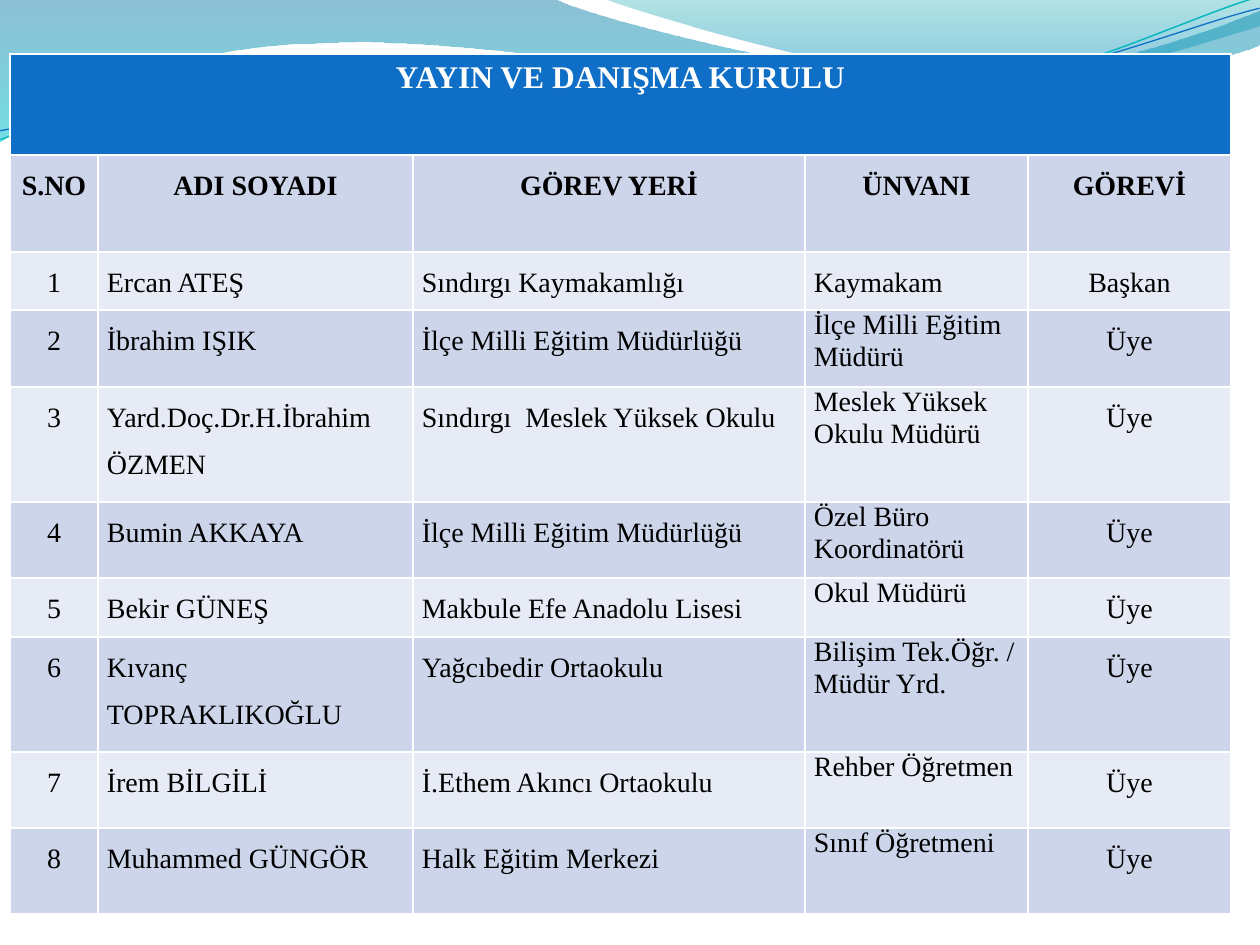
from lxml import etree
from pptx import Presentation
from pptx.dml.color import RGBColor
from pptx.enum.text import PP_ALIGN
from pptx.oxml.ns import qn
from pptx.util import Emu, Pt

LEFT, MID = PP_ALIGN.LEFT, PP_ALIGN.CENTER
SCALE = 914400 / 126
FONT = "Times New Roman"
WHITE, BLACK, BLUE, TEAL = "FFFFFF", "000000", "0F6FC6", "0AB8BF"
BANDS = ["E7EBF5", "CCD5EA"]
TILT = 357.3

COLS = [88, 315, 392, 223, 203]
ROWS = [101, 97, 58, 77, 115, 76, 59, 115, 76, 86]
TITLE = "YAYIN VE DANIŞMA KURULU"
HEADS = ["S.NO", "ADI SOYADI", "GÖREV YERİ", "ÜNVANI", "GÖREVİ"]
BOARD = [
    ("Ercan ATEŞ", "Sındırgı Kaymakamlığı", "Kaymakam", "Başkan"),
    ("İbrahim IŞIK", "İlçe Milli Eğitim Müdürlüğü", "İlçe Milli Eğitim Müdürü", "Üye"),
    ("Yard.Doç.Dr.H.İbrahim ÖZMEN", "Sındırgı  Meslek Yüksek Okulu",
     "Meslek Yüksek Okulu Müdürü", "Üye"),
    ("Bumin AKKAYA", "İlçe Milli Eğitim Müdürlüğü", "Özel Büro Koordinatörü", "Üye"),
    ("Bekir GÜNEŞ", "Makbule Efe Anadolu Lisesi", "Okul Müdürü", "Üye"),
    ("Kıvanç TOPRAKLIKOĞLU", "Yağcıbedir Ortaokulu", "Bilişim Tek.Öğr. / Müdür Yrd.", "Üye"),
    ("İrem BİLGİLİ", "İ.Ethem Akıncı Ortaokulu", "Rehber Öğretmen", "Üye"),
    ("Muhammed GÜNGÖR", "Halk Eğitim Merkezi", "Sınıf Öğretmeni", "Üye"),
]

WAVES = [
    ([(0, 0), (554, -1),
      (600, 21, 837, 79, 955, 79), (1075, 79, 1207, 33, 1260, 11), (1261, 45),
      (1239, 55, 1096, 96, 940, 95), (784, 95, 481, 35, 324, 43),
      (163, 45, 58, 105, -1, 142)],
     [(0, "0074A1", 45), (1, "00C6CF", 55)]),
    ([(604, -1), (641, 14, 859, 78, 969, 82),
      (1079, 87, 1211, 40, 1260, 26), (1260, 0)],
     [(0, "00A1A9", 30), (0.8, "008BBF", 45)]),
]
CURVES = [
    ([(-2, 110), (59, 90, 200, 52, 350, 53), (499, 53, 745, 118, 896, 114),
      (1049, 109, 1184, 45, 1260, 27)], TEAL, 0.85),
    ([(-2, 101), (57, 94, 207, 57, 357, 58), (509, 58, 750, 112, 902, 108),
      (1052, 104, 1188, 52, 1262, 38)], BLUE, 0.75),
]


def px(n):
    return Emu(round(n * SCALE))


def rgb(code):
    return RGBColor.from_string(code)


def assign(obj, values):
    for name, value in values.items():
        setattr(obj, name, value)


def outline(slide, path, close):
    dots = [(px(x), px(y)) for step in path for x, y in zip(step[::2], step[1::2])]
    pen = slide.shapes.build_freeform(*dots[0], scale=1.0)
    pen.add_line_segments(dots[1:], close=close)
    shape = pen.convert_to_shape()
    shape.shadow.inherit = False
    lines = iter(list(shape.element.spPr.iter(qn("a:lnTo"))))
    for step in path[1:]:
        line = next(lines)
        if len(step) == 6:
            line.tag = qn("a:cubicBezTo")
            for other in (next(lines), next(lines)):
                line.append(other[0])
                other.getparent().remove(other)
    return shape


def add_wave(slide, path, stops):
    shape = outline(slide, path, True)
    shape.line.fill.background()
    shape.fill.gradient()
    shape.fill.gradient_angle = 270
    for stop, (pos, code, alpha) in zip(shape.fill.gradient_stops, stops):
        stop.position = pos
        stop.color.rgb = rgb(code)
    for tint, (pos, code, alpha) in zip(shape.element.spPr.iter(qn("a:srgbClr")), stops):
        etree.SubElement(tint, qn("a:alpha"), val=str(alpha * 1000))


def add_curve(slide, path, code, width):
    shape = outline(slide, path, False)
    shape.rotation = TILT
    shape.fill.background()
    shape.line.color.rgb = rgb(code)
    shape.line.width = Pt(width)


def fill_cell(cell, text, back, color=BLACK, size=16, bold=False, align=MID, gap=1.5):
    cell.fill.solid()
    cell.fill.fore_color.rgb = rgb(back)
    para = cell.text_frame.paragraphs[0]
    para.alignment = align
    if gap:
        para.line_spacing = gap
    run = para.add_run()
    run.text = text
    assign(run.font, {"name": FONT, "size": Pt(size), "bold": bold})
    run.font.color.rgb = rgb(color)


def add_board(slide):
    frame = slide.shapes.add_table(len(ROWS), len(COLS), px(10), px(54),
                                   px(sum(COLS)), px(sum(ROWS)))
    table = frame.table
    for col, width in zip(table.columns, COLS):
        col.width = px(width)
    for row, height in zip(table.rows, ROWS):
        row.height = px(height)

    title = table.cell(0, 0)
    title.merge(table.cell(0, len(COLS) - 1))
    fill_cell(title, TITLE, BLUE, WHITE, 18, True, gap=None)

    people = [(str(n), *person) for n, person in enumerate(BOARD, 1)]
    for r, texts in enumerate([HEADS] + people, 1):
        head = r == 1
        for c, text in enumerate(texts):
            cell = table.cell(r, c)
            assign(cell, {"margin_left": px(9), "margin_right": px(9),
                          "margin_top": 0, "margin_bottom": 0})
            fill_cell(cell, text, BANDS[r % 2], bold=head,
                      align=MID if head or c in (0, 4) else LEFT,
                      gap=None if c == 3 and r > 2 else 1.5)


def main():
    deck = Presentation()
    assign(deck, {"slide_width": px(1260), "slide_height": px(945)})
    slide = deck.slides.add_slide(deck.slide_layouts[6])
    for wave in WAVES:
        add_wave(slide, *wave)
    for curve in CURVES:
        add_curve(slide, *curve)
    add_board(slide)
    deck.save("out.pptx")


if __name__ == "__main__":
    main()
